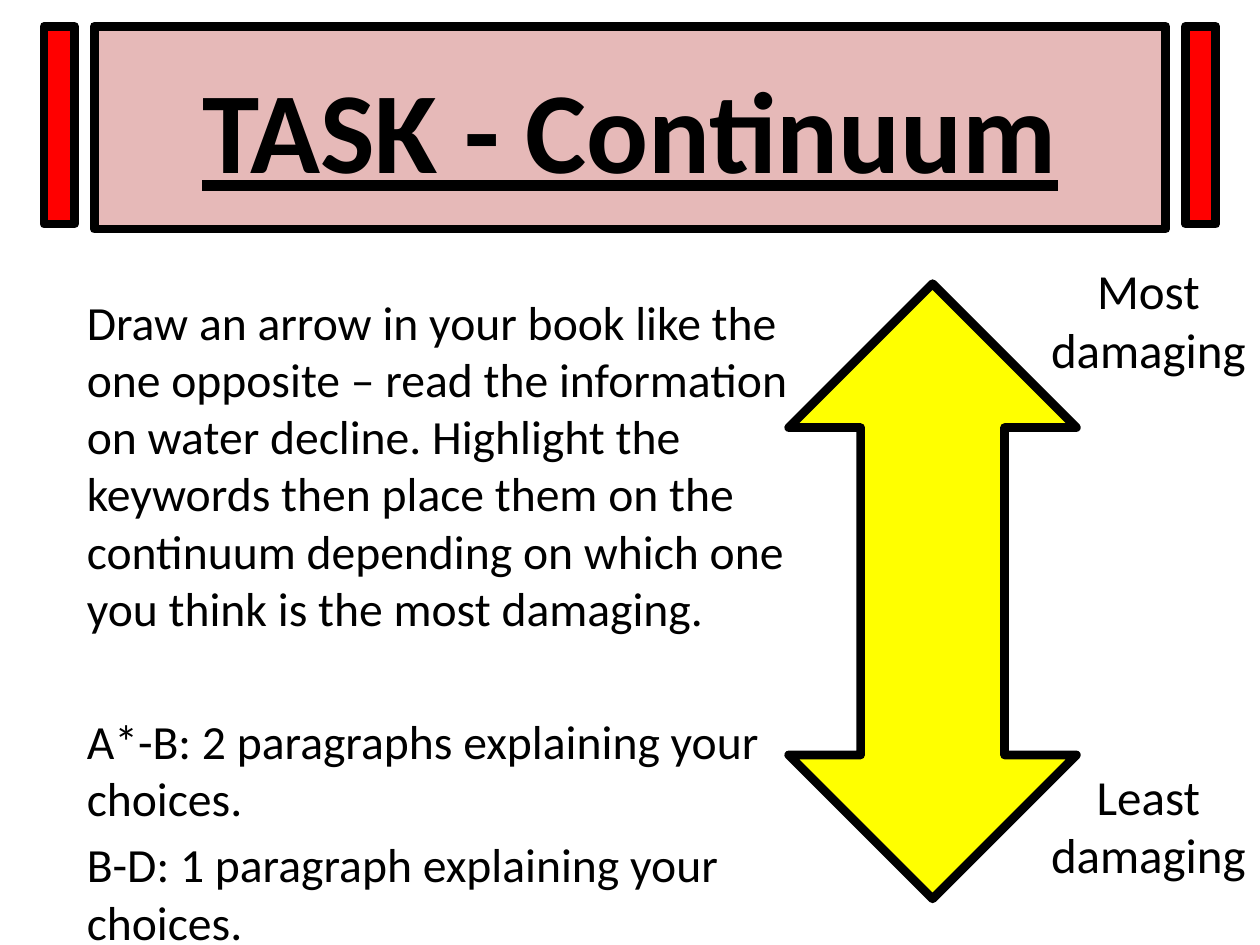
"""Build the continuum task slide."""
import pptx
import pptx.dml.color
import pptx.enum.shapes
import pptx.enum.text
import pptx.util

Cm, Pt = pptx.util.Cm, pptx.util.Pt
RGB = pptx.dml.color.RGBColor.from_string
SHAPE = pptx.enum.shapes.MSO_SHAPE
ALIGN = pptx.enum.text.PP_ALIGN
ANCHOR = pptx.enum.text.MSO_ANCHOR

WIDTH, HEIGHT = 25.4, 19.05
BAR_LEFT, BAR_WIDTH = 0.89, 0.61
LABEL_LEFT, LABEL_WIDTH, LABEL_HEIGHT = 20.9, 4.5, 2.64


class Theme:
    ink = RGB("000000")
    banner = RGB("E6B9B8")
    bar = RGB("FF0000")
    arrow = RGB("FFFF00")
    outline = Pt(5)
    title = {"name": "Calibri", "size": Pt(66), "bold": True, "underline": True}
    body = {"name": "Calibri", "size": Pt(27.2)}
    label = {"name": "Calibri", "size": Pt(28)}


TITLE = "TASK - Continuum"
BODY = [
    ("Draw an arrow in your book like the one opposite – read the information "
     "on water decline. Highlight the keywords then place them on the continuum "
     "depending on which one you think is the most damaging.", 0),
    ("A*-B: 2 paragraphs explaining your choices.", 43.3),
    ("B-D: 1 paragraph explaining your choices.", 5.2),
]
LABELS = [("Most damaging", 5.13), ("Least damaging", 15.32)]


def apply(obj, values):
    for name, value in values.items():
        setattr(obj, name, value)


def add_block(s, kind, box, color):
    sp = s.shapes.add_shape(kind, *map(Cm, box))
    sp.shadow.inherit = False
    sp.fill.solid()
    sp.fill.fore_color.rgb = color
    sp.line.color.rgb = Theme.ink
    sp.line.width = Theme.outline
    return sp


def add_text(s, box):
    tf = s.shapes.add_textbox(*map(Cm, box)).text_frame
    tf.word_wrap = True
    return tf


def write(p, text, font, **layout):
    r = p.add_run()
    r.text = text
    apply(r.font, font)
    r.font.color.rgb = Theme.ink
    apply(p, layout)


def main():
    prs = pptx.Presentation()
    apply(prs, {"slide_width": Cm(WIDTH), "slide_height": Cm(HEIGHT)})
    s = prs.slides.add_slide(prs.slide_layouts[6])

    sp = add_block(s, SHAPE.RECTANGLE, (1.9, 0.53, 21.6, 4.09), Theme.banner)
    tf = sp.text_frame
    tf.vertical_anchor = ANCHOR.MIDDLE
    write(tf.paragraphs[0], TITLE, Theme.title, alignment=ALIGN.CENTER)

    for left in (BAR_LEFT, WIDTH - BAR_LEFT - BAR_WIDTH):
        add_block(s, SHAPE.RECTANGLE, (left, 0.53, BAR_WIDTH, 3.99), Theme.bar)

    tf = add_text(s, (1.5, 5.77, 15, 12.6))
    for i, (text, gap) in enumerate(BODY):
        p = tf.add_paragraph() if i else tf.paragraphs[0]
        write(p, text, Theme.body, space_before=Pt(gap), line_spacing=Pt(32.7))

    add_block(s, SHAPE.UP_DOWN_ARROW, (15.9, 5.72, 5.8, 12.4), Theme.arrow)

    for text, top in LABELS:
        tf = add_text(s, (LABEL_LEFT, top, LABEL_WIDTH, LABEL_HEIGHT))
        write(tf.paragraphs[0], text, Theme.label, alignment=ALIGN.CENTER)

    prs.save("out.pptx")


if __name__ == "__main__":
    main()
